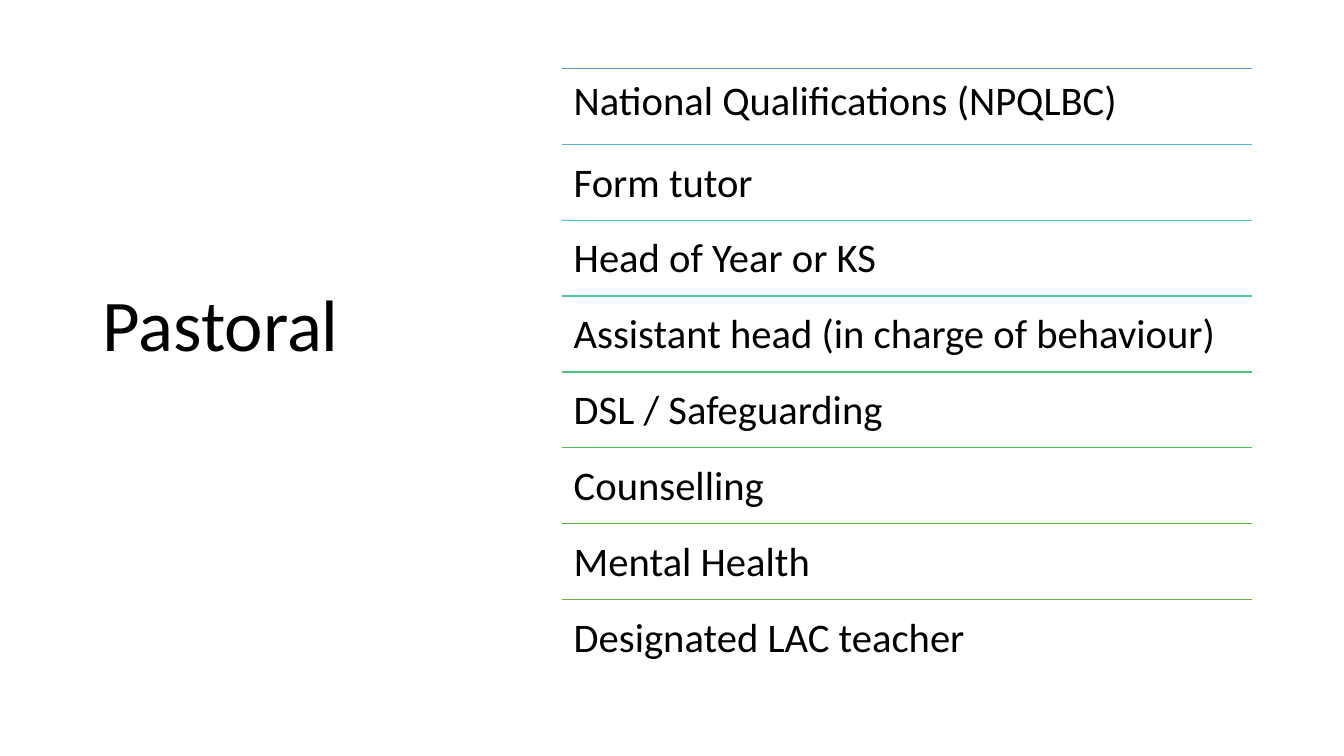
from pptx import Presentation
from pptx.dml.color import RGBColor
from pptx.enum.shapes import MSO_CONNECTOR
from pptx.enum.text import MSO_ANCHOR
from pptx.oxml.ns import qn
from pptx.util import Inches, Pt
from lxml.etree import SubElement

COLORS = {
    "text": "000000",
    "National Qualifications (NPQLBC)": "5B9BD5",
    "Form tutor": "57B7D1",
    "Head of Year or KS": "53CCC5",
    "Assistant head (in charge of behaviour)": "4FC7A0",
    "DSL / Safeguarding": "4CC27B",
    "Counselling": "48BD58",
    "Mental Health": "55B646",
    "Designated LAC teacher": "70AD47",
}
ROLES = [role for role in COLORS if role != "text"]
WIDTH, HEIGHT = 13.33, 7.5
LIST_LEFT, LIST_TOP, LIST_WIDTH, LIST_HEIGHT = 5.57, 0.68, 6.85, 6.02
ROW = LIST_HEIGHT / len(ROLES)


class PastoralSlide:
    """Hold the style and the current slide, and draw its elements."""

    font = "Calibri"

    def __init__(self, deck):
        self.slide = deck.slides.add_slide(deck.slide_layouts[6])

    def apply(self, target, formats):
        for attribute, value in formats.items():
            setattr(target, attribute, value)

    def text(self, wording, left, top, width, height, size, frame_format, spacing=1.0):
        box = self.slide.shapes.add_textbox(
            Inches(left), Inches(top), Inches(width), Inches(height)
        )
        frame = box.text_frame
        self.apply(frame, {"word_wrap": True, **frame_format})
        paragraph = frame.paragraphs[0]
        paragraph.line_spacing = spacing
        run = paragraph.add_run()
        run.text = wording
        self.apply(run.font, {"name": self.font, "size": Pt(size)})
        run.font.color.rgb = RGBColor.from_string(COLORS["text"])

    def rule(self, row, color):
        y = Inches(LIST_TOP + row * ROW)
        divider = self.slide.shapes.add_connector(
            MSO_CONNECTOR.STRAIGHT, Inches(LIST_LEFT), y, Inches(LIST_LEFT + LIST_WIDTH), y
        )
        divider.line.color.rgb = RGBColor.from_string(color)
        divider.line.width = Pt(1)
        SubElement(divider._element.spPr, qn("a:effectLst"))

    def title(self, wording):
        centring = {"vertical_anchor": MSO_ANCHOR.MIDDLE, "margin_bottom": Inches(0.85)}
        self.text(wording, 0.92, 0.61, 3.69, 6.09, 52, centring, 0.9)

    def role(self, row, wording):
        sides = ("left", "top", "right", "bottom")
        margins = {f"margin_{side}": Inches(0.12) for side in sides}
        top = LIST_TOP + row * ROW
        spacing = 0.9 if row == 0 else 1.0
        self.rule(row, COLORS[wording])
        self.text(wording, LIST_LEFT, top, LIST_WIDTH, ROW, 29, margins, spacing)


def main():
    deck = Presentation()
    deck.slide_width, deck.slide_height = Inches(WIDTH), Inches(HEIGHT)
    pastoral = PastoralSlide(deck)
    pastoral.title("Pastoral")
    for row, wording in enumerate(ROLES):
        pastoral.role(row, wording)
    deck.save("out.pptx")


if __name__ == "__main__":
    main()
